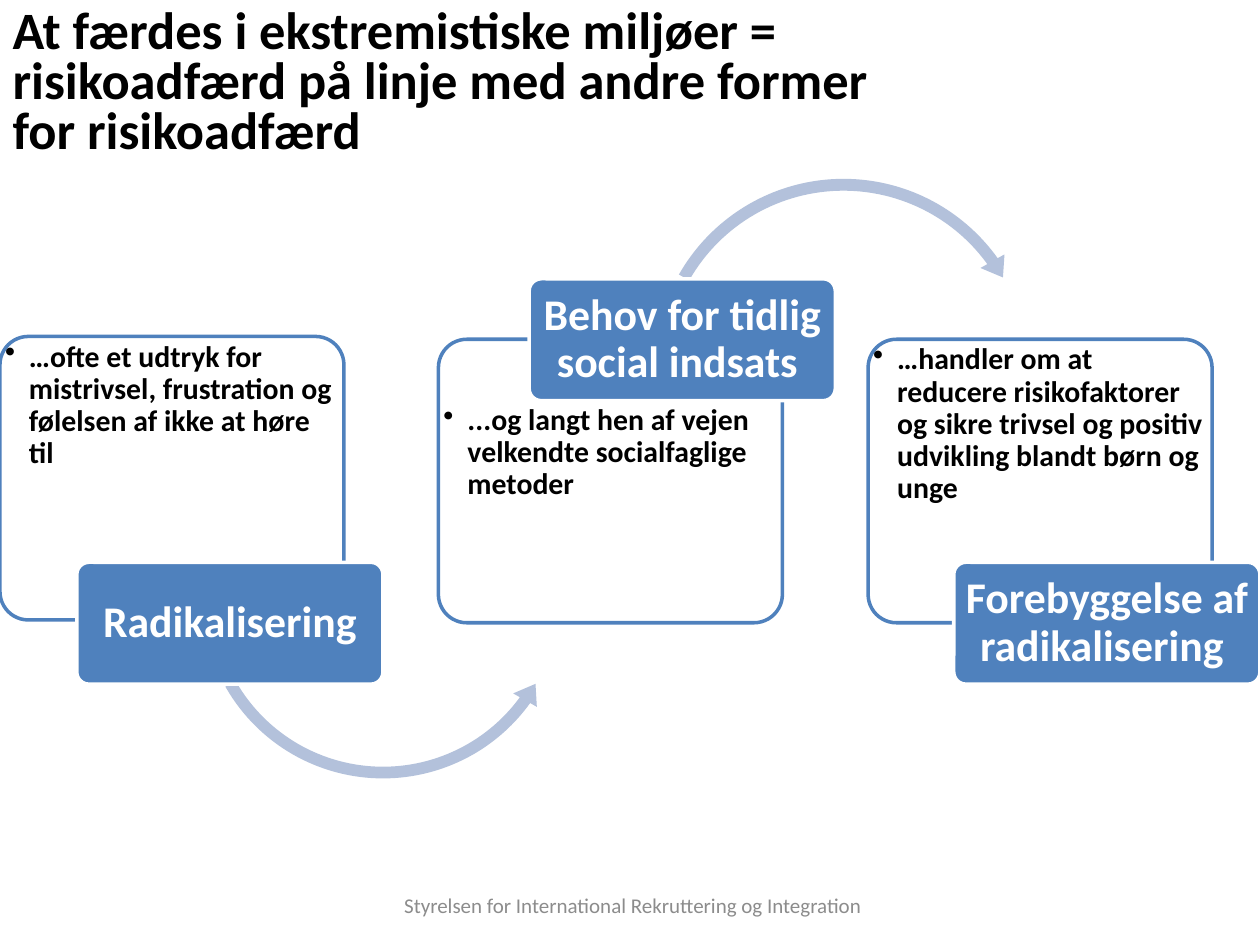
from lxml import etree
from pptx import Presentation
from pptx import util as u
from pptx.dml.color import RGBColor
from pptx.enum import shapes, text
from pptx.oxml.ns import qn

WIDTH, HEIGHT = u.Inches(10), u.Inches(7.5)
BLUE, PALE, WHITE, BLACK, GREY = "4F81BD", "B3C1DB", "FFFFFF", "000000", "8C8C8C"
PANEL_W, PANEL_H, BODY_H = 0.273, 0.3, 0.236
LABEL_W, LABEL_H = 0.243, 0.129
KIND = shapes.MSO_SHAPE
ALIGN, ANCHOR = text.PP_ALIGN, text.MSO_ANCHOR

STEPS = [
    dict(panel=(0, 0.356), body_top=0.356, label=(0.061, 0.595), title="Radikalisering",
         body="…ofte et udtryk for mistrivsel, frustration og følelsen af ikke at høre til",
         arrow=(KIND.LEFT_CIRCULAR_ARROW, (0.154, 0.432, 0.3, 0.4),
                (0.031, 3.807, 21.562, 90.245, 0.036))),
    dict(panel=(0.348, 0.359), body_top=0.423, label=(0.42, 0.295),
         title="Behov for tidlig social indsats ",
         body="...og langt hen af vejen velkendte socialfaglige metoder",
         arrow=(KIND.CIRCULAR_ARROW, (0.513, 0.181, 0.313, 0.417),
                (0.03, 3.628, 194.617, 125.755, 0.035))),
    dict(panel=(0.689, 0.359), body_top=0.359, label=(0.757, 0.595),
         title="Forebyggelse af radikalisering ",
         body="…handler om at reducere risikofaktorer og sikre trivsel og positiv udvikling "
              "blandt børn og unge"),
]


def colour(value):
    """Turn a hex string into a colour."""
    return RGBColor.from_string(value)


def place(box):
    """Turn shares of the slide into left, top, width and height."""
    return [round(share * side) for share, side in zip(box, (WIDTH, HEIGHT) * 2)]


def apply(target, formats):
    """Set every attribute named in a dict."""
    for name, value in formats.items():
        setattr(target, name, value)


def write(holder, words, size, ink, bold=True, margins=(0, 0, 0, 0), anchor=ANCHOR.TOP, **paragraph):
    """Fill a text frame with one formatted paragraph."""
    frame = holder.text_frame
    apply(frame, dict(word_wrap=True, auto_size=text.MSO_AUTO_SIZE.NONE, vertical_anchor=anchor))
    sides = ("margin_left", "margin_top", "margin_right", "margin_bottom")
    apply(frame, {side: u.Inches(gap) for side, gap in zip(sides, margins)})
    line = frame.paragraphs[0]
    line.text = words
    apply(line, paragraph)
    for run in line.runs:
        apply(run.font, dict(name="Calibri", size=u.Pt(size), bold=bold))
        run.font.color.rgb = colour(ink)
    return line


def draw(slide, kind, box, fill, outline=None, adjustments=()):
    """Add a flat preset shape."""
    shape = slide.shapes.add_shape(kind, *place(box))
    shape.shadow.inherit = False
    shape.fill.solid()
    shape.fill.fore_color.rgb = colour(fill)
    if outline:
        shape.line.color.rgb = colour(outline)
        shape.line.width = u.Pt(2)
    else:
        shape.line.fill.background()
    for index, value in enumerate(adjustments):
        shape.adjustments[index] = value
    return shape


def add_bullet(line):
    """Give a paragraph a round bullet with a hanging indent."""
    properties = line._p.get_or_add_pPr()
    indent = u.Inches(0.19)
    properties.set("marL", str(indent))
    properties.set("indent", str(-indent))
    etree.SubElement(properties, qn("a:buChar"), char="•")


def add_heading(slide, box):
    """Place the slide title."""
    title = slide.shapes.title
    apply(title, dict(zip(("left", "top", "width", "height"), place(box))))
    write(title, "At færdes i ekstremistiske miljøer = \v"
                 "risikoadfærd på linje med andre former \vfor risikoadfærd",
          30, BLACK, margins=(0.1, 0.07, 0.1, 0), alignment=ALIGN.LEFT, line_spacing=0.8)


def add_step(slide, panel, body_top, label, title, body, arrow=None):
    """Place one step: panel, bullet, outgoing arrow and label."""
    frame = draw(slide, KIND.ROUNDED_RECTANGLE, (*panel, PANEL_W, PANEL_H), WHITE, BLUE, [0.1])
    tint = frame.fill._xPr.find(qn("a:solidFill"))[0]
    etree.SubElement(tint, qn("a:alpha"), val="90000")
    bullet = slide.shapes.add_textbox(*place((panel[0], body_top, PANEL_W, BODY_H)))
    add_bullet(write(bullet, body, 17, BLACK, margins=(0.04,) * 4, line_spacing=0.9))
    if arrow:
        kind, box, adjustments = arrow
        draw(slide, kind, box, PALE, adjustments=adjustments)
    tag = draw(slide, KIND.ROUNDED_RECTANGLE, (*label, LABEL_W, LABEL_H), BLUE, WHITE, [0.1])
    write(tag, title, 25, WHITE, margins=(0.02, 0, 0.02, 0), anchor=ANCHOR.MIDDLE,
          alignment=ALIGN.CENTER, line_spacing=0.9)


def add_footer(slide, box):
    """Place the sender at the foot of the slide."""
    sender = slide.shapes.add_textbox(*place(box))
    write(sender, "Styrelsen for International Rekruttering og Integration", 12, GREY,
          bold=False, margins=(0.1, 0.05, 0.1, 0.05), anchor=ANCHOR.MIDDLE)


def main():
    """Build and save the presentation."""
    deck = Presentation()
    apply(deck, dict(slide_width=WIDTH, slide_height=HEIGHT))
    slide = deck.slides.add_slide(deck.slide_layouts[5])
    add_heading(slide, (0, 0, 1, 0.119))
    for step in STEPS:
        add_step(slide, **step)
    add_footer(slide, (0.311, 0.931, 0.426, 0.053))
    deck.save("out.pptx")


if __name__ == "__main__":
    main()
